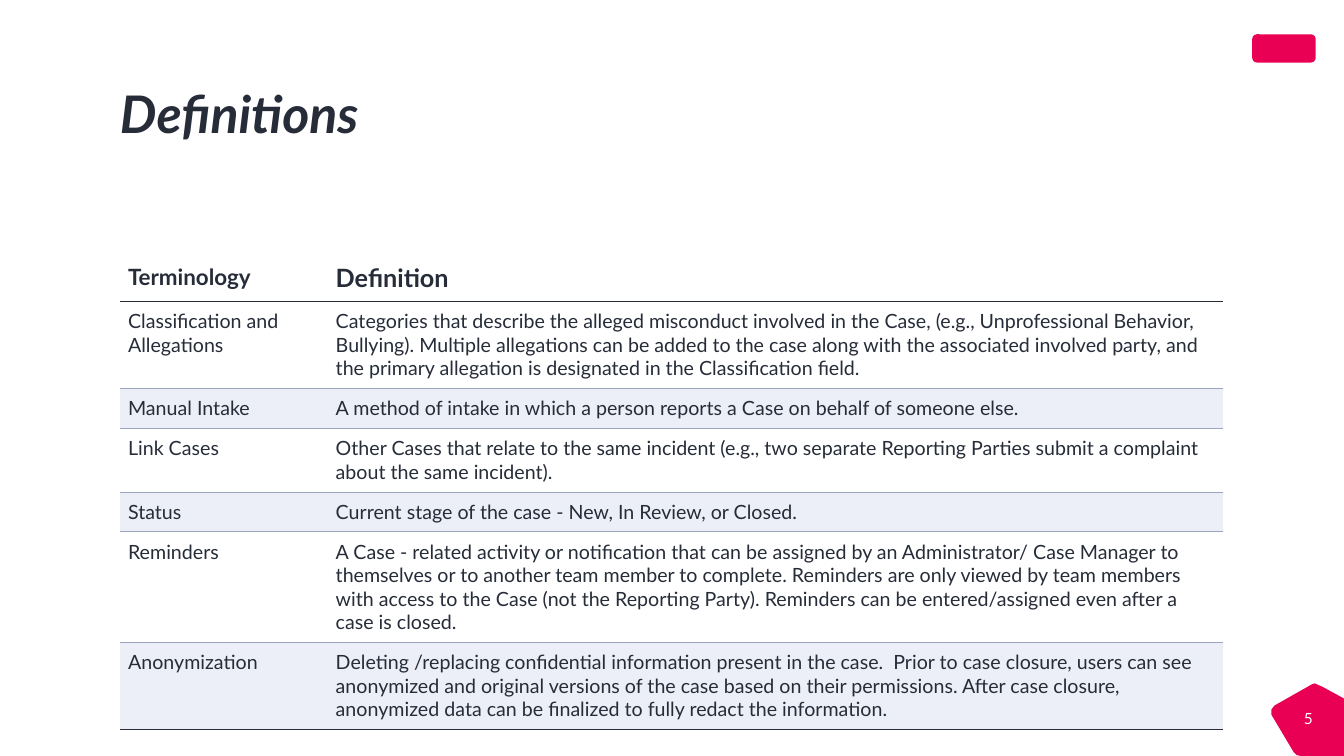
from lxml.etree import SubElement
from pptx import Presentation
from pptx.dml.color import RGBColor
from pptx.enum.shapes import MSO_SHAPE
from pptx.enum.text import MSO_ANCHOR, PP_ALIGN
from pptx.oxml.ns import qn
from pptx.util import Inches, Pt

TITLE = "Definitions"
PAGE = "5"
HEADER = ("Terminology", "Definition")
# term, definition, number of text lines in the row
TERMS = [
    ("Classification and Allegations",
     "Categories that describe the alleged misconduct involved in the Case, (e.g., Unprofessional "
     "Behavior, Bullying). Multiple allegations can be added to the case along with the associated "
     "involved party, and the primary allegation is designated in the Classification field.", 3),
    ("Manual Intake",
     "A method of intake in which a person reports a Case on behalf of someone else.", 1),
    ("Link Cases",
     "Other Cases that relate to the same incident (e.g., two separate Reporting Parties submit a "
     "complaint about the same incident).", 2),
    ("Status", "Current stage of the case - New, In Review, or Closed.", 1),
    ("Reminders",
     "A Case - related activity or notification that can be assigned by an Administrator/ Case "
     "Manager to themselves or to another team member to complete. Reminders are only viewed by "
     "team members with access to the Case (not the Reporting Party). Reminders can be "
     "entered/assigned even after a case is closed.", 4),
    ("Anonymization",
     "Deleting /replacing confidential information present in the case.  Prior to case closure, "
     "users can see anonymized and original versions of the case based on their permissions. After "
     "case closure, anonymized data can be finalized to fully redact the information.", 3),
]
BADGE = [(13.04, 6.78), (13.11, 6.81), (13.33, 6.93), (13.33, 7.5), (12.9, 7.5), (12.86, 7.49),
         (12.83, 7.46), (12.61, 7.09), (12.61, 7.04), (12.64, 7), (13.01, 6.79)]

THEME = {
    "font": "Lato", "ink": "262C38", "rule": "9BA4BF", "band": "ECEFF8",
    "accent": "E90055", "white": "FFFFFF",
    "title": 37, "heads": (16, 18), "body": 14, "page": 11,
}
LEFT, WIDTH = 1.19, 10.94
TABLE_TOP, HEAD_H, LINE_H, PAD = 2.53, 0.46, 0.235, 0.08
COLUMNS = (2.06, 8.88)


def rgb(name):
    return RGBColor.from_string(THEME[name])


def write(tf, text, size, color="ink", **formats):
    p = tf.paragraphs[0]
    r = p.add_run()
    r.text = text
    values = {"name": THEME["font"], "size": Pt(size), "bold": False, **formats}
    for key, value in values.items():
        setattr(r.font, key, value)
    r.font.color.rgb = rgb(color)
    return p


def set_margins(target, left=0, top=0, right=0, bottom=0):
    sides = {"left": left, "top": top, "right": right, "bottom": bottom}
    for side, value in sides.items():
        setattr(target, f"margin_{side}", Inches(value))


def set_borders(cell, top, bottom):
    """Draw rules above and below; each is (colour, points) or None."""
    tc_pr = cell._tc.get_or_add_tcPr()
    sides = {"lnL": None, "lnR": None, "lnT": top, "lnB": bottom}
    for i, (tag, rule) in enumerate(sides.items()):
        ln = SubElement(tc_pr, qn(f"a:{tag}"))
        if rule:
            ln.set("w", str(Pt(rule[1])))
            fill = SubElement(ln, qn("a:solidFill"))
            SubElement(fill, qn("a:srgbClr")).set("val", THEME[rule[0]])
        else:
            SubElement(ln, qn("a:noFill"))
        tc_pr.insert(i, ln)


def paint(sp):
    sp.shadow.inherit = False
    sp.fill.solid()
    sp.fill.fore_color.rgb = rgb("accent")
    sp.line.fill.background()


def add_title(slide):
    sp = slide.shapes.title
    sp.left, sp.top, sp.width, sp.height = map(Inches, (LEFT, 0.86, WIDTH, 0.66))
    tf = sp.text_frame
    set_margins(tf)
    tf.vertical_anchor = MSO_ANCHOR.TOP
    p = write(tf, TITLE, THEME["title"], bold=True, italic=True)
    p.alignment = PP_ALIGN.LEFT
    p.line_spacing = 0.95


def add_badge(slide):
    points = [(Inches(x), Inches(y)) for x, y in BADGE]
    builder = slide.shapes.build_freeform(*points[0])
    builder.add_line_segments(points[1:])
    sp = builder.convert_to_shape()
    paint(sp)
    tf = sp.text_frame
    set_margins(tf, right=0.31, bottom=0.28)
    tf.vertical_anchor = MSO_ANCHOR.BOTTOM
    write(tf, PAGE, THEME["page"], "white").alignment = PP_ALIGN.RIGHT


def add_definitions(slide):
    heights = [HEAD_H] + [lines * LINE_H + 2 * PAD for *_, lines in TERMS]
    rows = [HEADER] + [(term, text) for term, text, _ in TERMS]
    frame = slide.shapes.add_table(len(rows), len(COLUMNS), Inches(LEFT), Inches(TABLE_TOP),
                                   Inches(WIDTH), Inches(sum(heights)))
    table = frame.table
    table.first_row = table.horz_banding = False
    for column, width in zip(table.columns, COLUMNS):
        column.width = Inches(width)
    thin, strong = ("rule", 0.5), ("ink", 1)
    rules = [None, strong] + [thin] * (len(TERMS) - 1) + [strong]
    for i, (row, height) in enumerate(zip(rows, heights)):
        table.rows[i].height = Inches(height)
        for j, text in enumerate(row):
            cell = table.cell(i, j)
            set_margins(cell, PAD, PAD, PAD, PAD)
            size = THEME["body"] if i else THEME["heads"][j]
            write(cell.text_frame, text, size, bold=i == 0)
            if i and i % 2 == 0:
                cell.fill.solid()
                cell.fill.fore_color.rgb = rgb("band")
            else:
                cell.fill.background()
            set_borders(cell, rules[i], rules[i + 1])


def main():
    prs = Presentation()
    prs.slide_width, prs.slide_height = Inches(13.33), Inches(7.5)
    slide = prs.slides.add_slide(prs.slide_layouts[5])
    mark = slide.shapes.add_shape(MSO_SHAPE.ROUNDED_RECTANGLE, Inches(12.42), Inches(0.34),
                                  Inches(0.63), Inches(0.28))
    paint(mark)
    add_title(slide)
    add_badge(slide)
    add_definitions(slide)
    prs.save("out.pptx")


if __name__ == "__main__":
    main()
